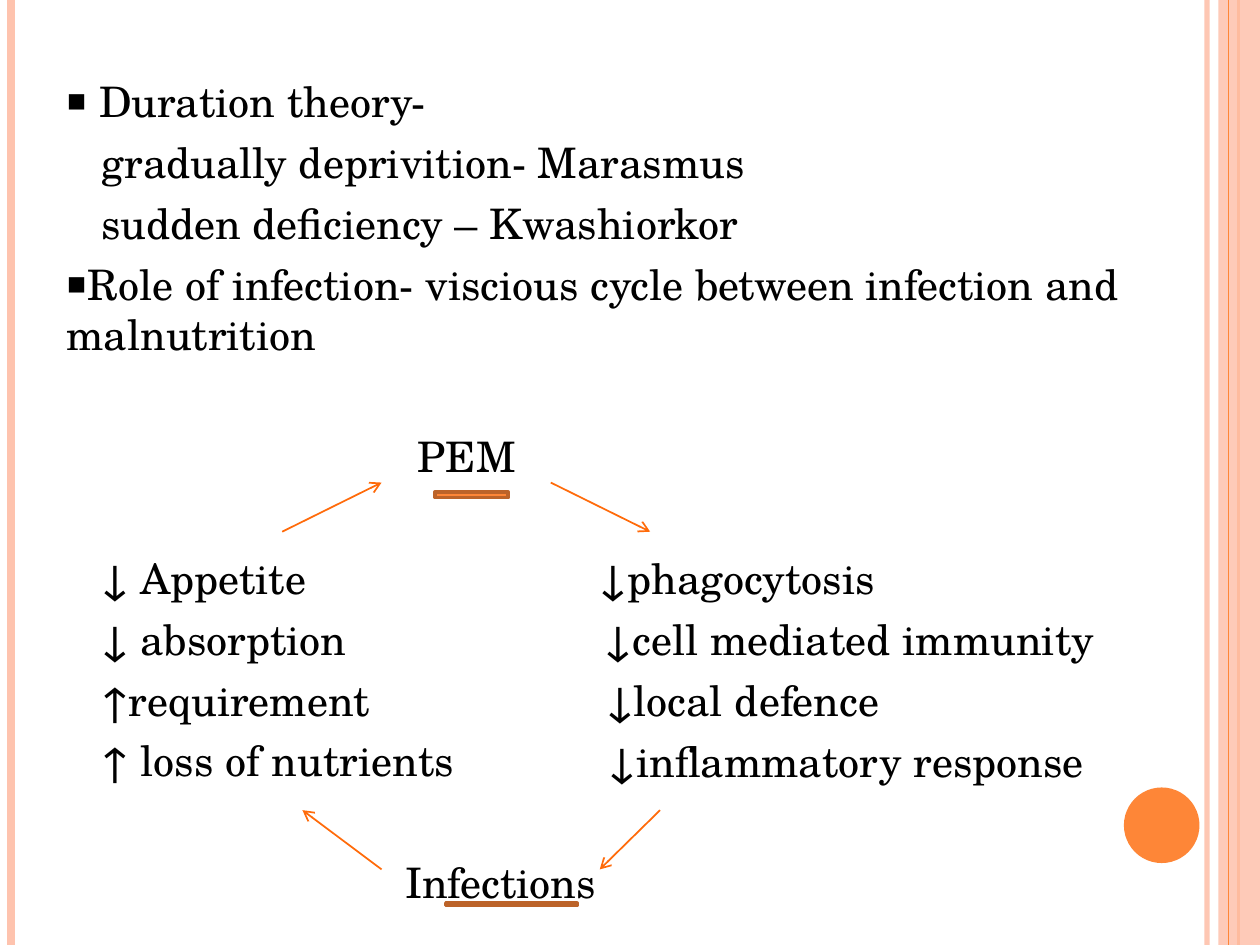
from dataclasses import dataclass

from lxml import etree
from pptx import Presentation
from pptx import util as u
from pptx.dml.color import RGBColor
from pptx.enum import shapes, text
from pptx.oxml.ns import qn


@dataclass(frozen=True)
class Theme:
    """Colours, font and type sizes of the slide."""
    ink: str = "000000"
    peach: str = "FEC3AE"
    orange: str = "FE8637"
    arrow: str = "FF6B0A"
    edge: str = "BC6329"
    font: str = "TeX Gyre Schola"
    size: float = 24
    gap: float = 6
    wide_gap: float = 40.8


T = Theme()
W, H = 10, 7.5


def add_alpha(fmt, percent):
    """Set the opacity of a solid fill."""
    clr = fmt._xPr.find(qn("a:solidFill"))[0]
    etree.SubElement(clr, qn("a:alpha"), val=str(percent * 1000))


def add_line(s, start, end, color, width, alpha=100, arrow=False):
    """Draw a straight line between two points, with an optional arrowhead."""
    ends = [u.Inches(v) for v in (*start, *end)]
    ln = s.shapes.add_connector(shapes.MSO_CONNECTOR.STRAIGHT, *ends)
    ln.line.color.rgb = RGBColor.from_string(color)
    ln.line.width = u.Pt(width)
    if alpha < 100:
        add_alpha(ln.line.fill, alpha)
    if arrow:
        etree.SubElement(ln.line._get_or_add_ln(), qn("a:tailEnd"), type="arrow")
    etree.SubElement(ln._element.spPr, qn("a:effectLst"))
    return ln


def add_shape(s, kind, box, fill, alpha=100, edge=None):
    """Add a filled preset shape, with an optional outline."""
    sp = s.shapes.add_shape(kind, *[u.Inches(v) for v in box])
    sp.shadow.inherit = False
    sp.fill.solid()
    sp.fill.fore_color.rgb = RGBColor.from_string(fill)
    if alpha < 100:
        add_alpha(sp.fill, alpha)
    if edge:
        sp.line.color.rgb = RGBColor.from_string(edge)
        sp.line.width = u.Pt(2)
    else:
        sp.line.fill.background()
    return sp


def add_frame(s, box):
    """Add a wrapping text box and return its text frame."""
    tf = s.shapes.add_textbox(*[u.Inches(v) for v in box]).text_frame
    tf.word_wrap = True
    tf.vertical_anchor = text.MSO_ANCHOR.TOP
    return tf


def add_para(tf, txt, indent=0, before=T.gap):
    """Append a paragraph with its indent and spacing."""
    p = tf.paragraphs[0]
    if p.runs:
        p = tf.add_paragraph()
    p.space_before = u.Pt(before)
    pPr = p._p.get_or_add_pPr()
    pPr.set("marL", str(u.Inches(indent)))
    pPr.set("indent", "0")
    r = p.add_run()
    r.text = txt
    r.font.name, r.font.size = T.font, u.Pt(T.size)
    r.font.color.rgb = RGBColor.from_string(T.ink)


def side_stripes(s, w, h):
    """Draw the side stripes and the disc for a slide of the given size."""
    def stripe(x, color, width, alpha=100):
        add_line(s, (x * w, 0), (x * w, h), color, width, alpha)

    stripe(0.958, T.peach, 3, 93)
    stripe(0.0085, T.peach, 4.5)
    stripe(0.983, T.orange, 1.5)
    add_shape(s, shapes.MSO_SHAPE.RECTANGLE, (0.967 * w, 0, 0.033 * w, h), T.peach, 87)
    stripe(0.975, T.orange, 0.75)
    add_shape(s, shapes.MSO_SHAPE.OVAL, (0.892 * w, h / 1.2, 0.06 * w, 0.08 * h), T.orange)


def body(s, box):
    """Write the theories and the words of the cycle."""
    x, y, w, h = box
    tf = add_frame(s, box)
    left = 0.03 * w
    add_para(tf, "▪ Duration theory-")
    add_para(tf, "gradually deprivition- Marasmus", left)
    add_para(tf, "sudden deficiency – Kwashiorkor", left)
    add_para(tf, "▪Role of infection- viscious cycle between infection and malnutrition")
    add_para(tf, "PEM", 0.305 * w, T.wide_gap)
    host = ("↓ Appetite", "↓ absorption", "↑requirement", "↑ loss of nutrients")
    for i, txt in enumerate(host):
        add_para(tf, txt, left, T.gap if i else T.wide_gap)
    add_para(tf, "Infections", 0.294 * w, T.wide_gap)

    defence = [("↓phagocytosis", 0), ("↓cell mediated immunity", 0.04),
               ("↓local defence", 0.05), ("↓inflammatory response", 0.07)]
    tf = add_frame(s, (x + 0.463 * w, y + 0.562 * h, 0.5 * w, 0.31 * h))
    for txt, indent in defence:
        add_para(tf, txt, indent)


def cycle(s, box):
    """Draw the arrows of the cycle and the bars under its two ends."""
    x, y, w, h = box
    arrows = [((0.73, 0), (1, 0.127)), ((1.027, 0.847), (0.863, 1)),
              ((0.27, 1), (0.055, 0.847)), ((0, 0.127), (0.27, 0))]
    for ends in arrows:
        start, end = [(x + a * w, y + b * h) for a, b in ends]
        add_line(s, start, end, T.arrow, 1, arrow=True)
    for a, b, c, d in ((0.38, 0, 0.27, 0.063), (0.38, 1.078, 0.486, 0.025)):
        add_shape(s, shapes.MSO_SHAPE.MATH_MINUS,
                  (x + a * w, y + b * h, c * w, d * h), T.orange, edge=T.edge)


def main():
    """Build the slide and save it."""
    prs = Presentation()
    prs.slide_width, prs.slide_height = u.Inches(W), u.Inches(H)
    s = prs.slides.add_slide(prs.slide_layouts[6])
    side_stripes(s, W, H)
    body(s, (0.43, 0.55, 9.14, 6.74))
    cycle(s, (2.24, 3.83, 2.92, 3.07))
    prs.save("out.pptx")


if __name__ == "__main__":
    main()
